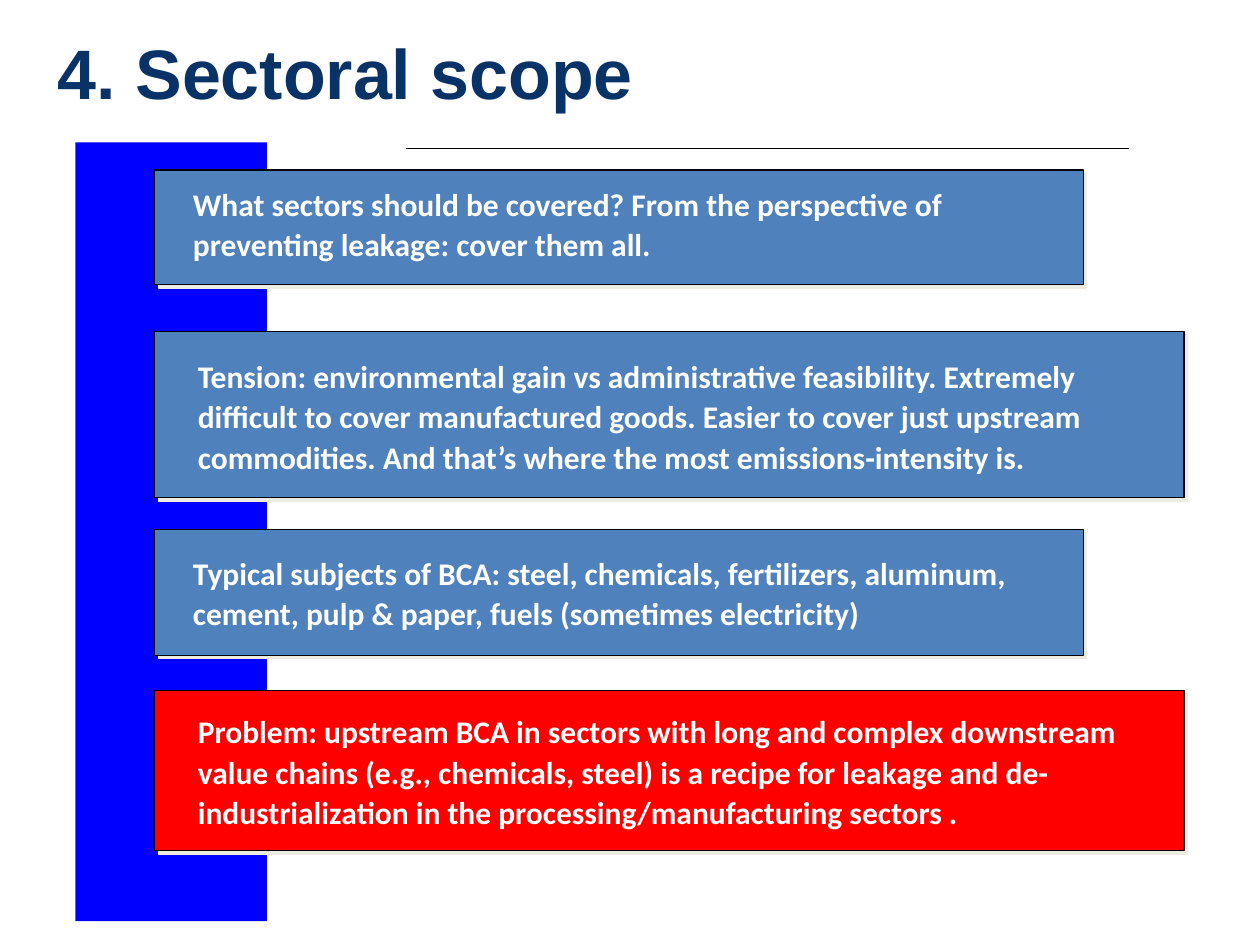
from dataclasses import dataclass

from lxml.etree import SubElement
from pptx import Presentation
from pptx.dml.color import RGBColor
from pptx.enum.shapes import MSO_CONNECTOR, MSO_SHAPE
from pptx.enum.text import MSO_ANCHOR as Anchor, PP_ALIGN as Align
from pptx.oxml.ns import qn
from pptx.util import Cm, Pt

NAVY = RGBColor(0x09, 0x32, 0x66)
BAND_BLUE = RGBColor(0x00, 0x00, 0xFF)
CARD_BLUE = RGBColor(0x4F, 0x81, 0xBD)
RED = RGBColor(0xFF, 0x00, 0x00)
BLACK = RGBColor(0x00, 0x00, 0x00)
WHITE = RGBColor(0xFF, 0xFF, 0xFF)
SHADOW = RGBColor(0xEE, 0xEC, 0xE1)
CARD_LEFT = 3.12


@dataclass(frozen=True)
class CardSize:
    width: float
    text_left: float
    text_width: float


@dataclass(frozen=True)
class Card:
    text: str
    top: float
    height: float
    text_top: float
    text_height: float
    size: CardSize
    color: RGBColor = CARD_BLUE


NARROW = CardSize(18.72, 3.89, 17.15)
WIDE = CardSize(20.75, 3.99, 19.02)

CARDS = [
    Card("What sectors should be covered? From the perspective of preventing "
         "leakage: cover them all.", 3.43, 2.31, 3.43, 2.11, NARROW),
    Card("Tension: environmental gain vs administrative feasibility. Extremely "
         "difficult to cover manufactured goods. Easier to cover just upstream "
         "commodities. And that’s where the most emissions-intensity is.",
         6.68, 3.35, 6.83, 3.07, WIDE),
    Card("Typical subjects of BCA: steel, chemicals, fertilizers, aluminum, "
         "cement, pulp & paper, fuels (sometimes electricity)",
         10.67, 2.54, 10.77, 2.31, NARROW),
    Card("Problem: upstream BCA in sectors with long and complex downstream "
         "value chains (e.g., chemicals, steel) is a recipe for leakage and "
         "de-industrialization in the processing/manufacturing sectors .",
         13.92, 3.23, 14.05, 2.95, WIDE, RED),
]


def write_text(box, text: str, *, font: str, size: float, color: RGBColor,
               line_spacing: float = 1.0, space_after: float = 0) -> None:
    frame = box.text_frame
    frame.word_wrap = True
    frame.vertical_anchor = Anchor.MIDDLE
    para = frame.paragraphs[0]
    para.alignment = Align.LEFT
    para.line_spacing = line_spacing
    para.space_before = Pt(0)
    para.space_after = Pt(space_after)
    span = para.add_run()
    span.text = text
    span.font.name = font
    span.font.size = Pt(size)
    span.font.bold = True
    span.font.color.rgb = color


def add_rectangle(shapes, left: float, top: float, width: float, height: float,
                  color: RGBColor):
    box = shapes.add_shape(MSO_SHAPE.RECTANGLE, Cm(left), Cm(top),
                           Cm(width), Cm(height))
    box.shadow.inherit = False
    box.fill.solid()
    box.fill.fore_color.rgb = color
    box.line.fill.background()
    return box


def add_shadow(box) -> None:
    effects = box.element.spPr.find(qn("a:effectLst"))
    shadow = SubElement(effects, qn("a:outerShdw"), dist=str(Pt(2.8)),
                        dir="2700000", algn="ctr", rotWithShape="0")
    SubElement(shadow, qn("a:srgbClr"), val=str(SHADOW))


def add_card(page, card: Card) -> None:
    group = page.shapes.add_group_shape()
    panel = add_rectangle(group.shapes, CARD_LEFT, card.top, card.size.width,
                          card.height, card.color)
    panel.line.color.rgb = BLACK
    panel.line.width = Pt(0.75)
    add_shadow(panel)

    box = group.shapes.add_textbox(Cm(card.size.text_left), Cm(card.text_top),
                                   Cm(card.size.text_width), Cm(card.text_height))
    frame = box.text_frame
    frame.margin_left = frame.margin_right = 0
    frame.margin_top = frame.margin_bottom = 0
    write_text(box, card.text, font="Calibri", size=18, color=WHITE,
               line_spacing=1.07, space_after=8)


def add_rule(page, left: float, right: float, top: float) -> None:
    rule = page.shapes.add_connector(MSO_CONNECTOR.STRAIGHT, Cm(left), Cm(top),
                                     Cm(right), Cm(top))
    rule.line.color.rgb = BLACK
    rule.line.width = Pt(0.75)
    SubElement(rule.element.spPr, qn("a:effectLst"))


def main() -> None:
    deck = Presentation()
    deck.slide_width, deck.slide_height = Cm(25.4), Cm(19.05)
    page = deck.slides.add_slide(deck.slide_layouts[5])

    title = page.shapes.title
    title.left, title.top = Cm(0.91), Cm(1.04)
    title.width, title.height = Cm(23.95), Cm(0.81)
    write_text(title, "4. Sectoral scope", font="Arial", size=40, color=NAVY)

    add_rectangle(page.shapes, 1.52, 2.87, 3.86, 15.7, BAND_BLUE)
    add_rule(page, 8.18, 22.76, 3)
    for card in CARDS:
        add_card(page, card)

    deck.save("out.pptx")


if __name__ == "__main__":
    main()
